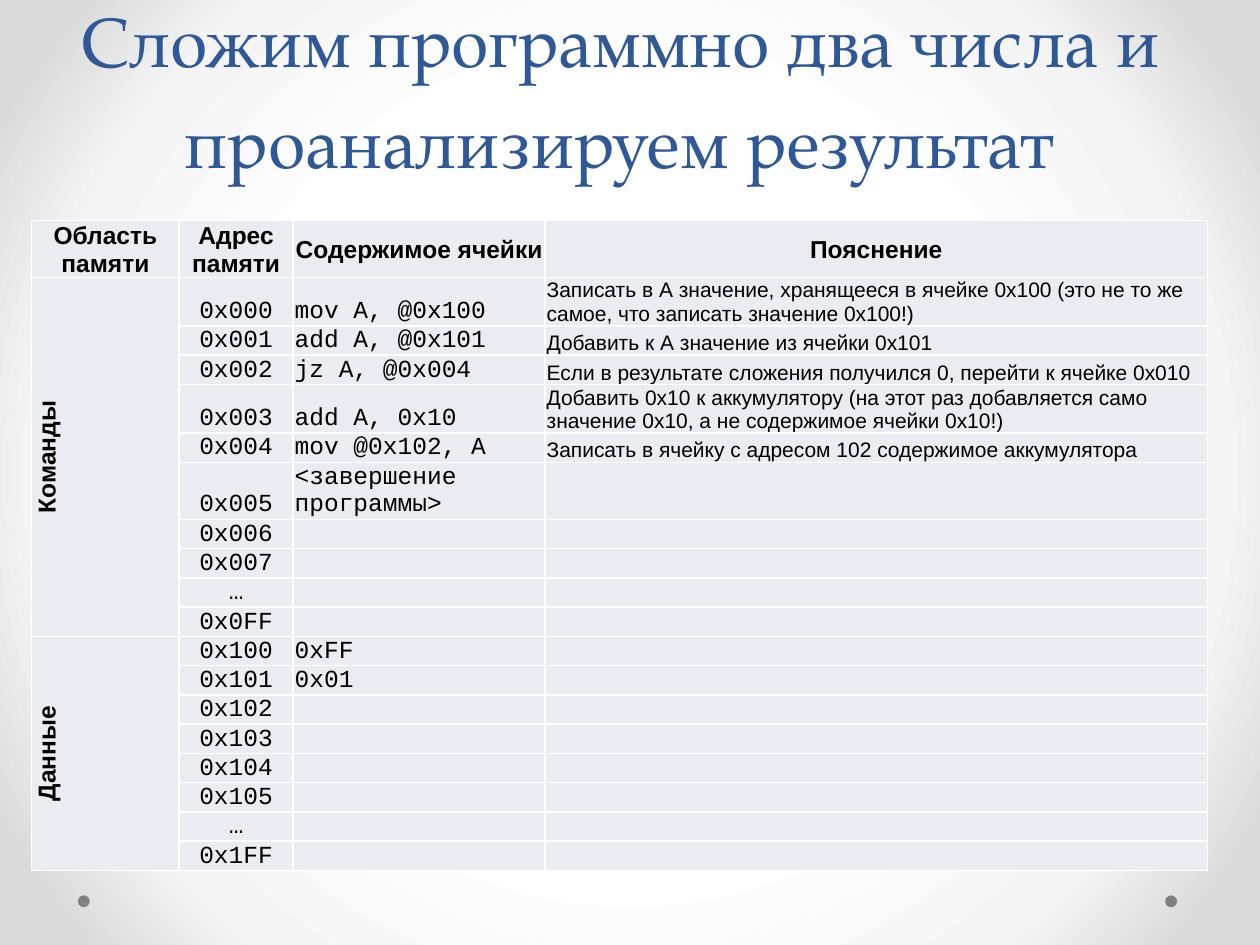
from dataclasses import dataclass

from lxml import etree
from pptx import Presentation
from pptx.dml.color import RGBColor
from pptx.enum.shapes import MSO_SHAPE
from pptx.enum.text import MSO_ANCHOR, MSO_AUTO_SIZE, PP_ALIGN
from pptx.oxml import parse_xml
from pptx.oxml.ns import nsdecls, qn
from pptx.util import Cm, Pt

CENTER, LEFT = PP_ALIGN.CENTER, PP_ALIGN.LEFT
MIDDLE, BOTTOM = MSO_ANCHOR.MIDDLE, MSO_ANCHOR.BOTTOM
OVAL = MSO_SHAPE.OVAL
NO_AUTOFIT = MSO_AUTO_SIZE.NONE


@dataclass(frozen=True)
class Theme:
    title_font: str = "TeX Gyre Pagella"
    text_font: str = "Arial"
    code_font: str = "Courier New"
    title_size: int = 40
    title_spacing: int = 58
    table_size: int = 14
    note_size: int = 12
    title_color: str = "2F5897"
    text_color: str = "000000"
    cell_color: str = "EAECF2"
    border_color: str = "FFFFFF"
    dot_color: str = "808080"
    background: tuple = ((50, "FFFFFF"), (76, "F4F4F4"), (92, "DADADA"))


THEME = Theme()

TITLE = "Сложим программно два числа и проанализируем результат"
HEADERS = ["Область памяти", "Адрес памяти", "Содержимое ячейки", "Пояснение"]
# Each memory area holds rows of address, content and explanation
MEMORY = {
    "Команды": [
        ("0x000", "mov A, @0x100", "Записать в А значение, хранящееся в ячейке 0x100 "
                                   "(это не то же самое, что записать значение 0x100!)"),
        ("0x001", "add A, @0x101", "Добавить к А значение из ячейки 0x101"),
        ("0x002", "jz A, @0x004",
         "Если в результате сложения получился 0, перейти к ячейке 0x010"),
        ("0x003", "add A, 0x10", "Добавить 0x10 к аккумулятору (на этот раз добавляется само "
                                 "значение 0x10, а не содержимое ячейки 0x10!)"),
        ("0x004", "mov @0x102, A", "Записать в ячейку с адресом 102 содержимое аккумулятора"),
        ("0x005", "<завершение программы>", ""),
        *((address, "", "") for address in ("0x006", "0x007", "…", "0x0FF")),
    ],
    "Данные": [
        ("0x100", "0xFF", ""),
        ("0x101", "0x01", ""),
        *((address, "", "") for address in ("0x102", "0x103", "0x104", "0x105", "…", "0x1FF")),
    ],
}
COLUMN_SHARES = [2.97, 2.3, 5.08, 13.35]
ROW_HEIGHT = 0.58
TALL_ROWS = {0: 1.14, 1: 0.97, 4: 0.97, 6: 1.14}


def color(value):
    return RGBColor.from_string(value)


def style_font(font, name, size, value, bold=False):
    font.name, font.size, font.bold = name, Pt(size), bold
    font.color.rgb = color(value)


def set_background(slide):
    """Radial gradient spreading from the middle of the slide."""
    stops = "".join(
        f'<a:gs pos="{position * 1000}"><a:srgbClr val="{value}"/></a:gs>'
        for position, value in THEME.background)
    slide.background.fill.solid()
    properties = slide.background.fill._xPr
    properties.replace(properties.find(qn("a:solidFill")), parse_xml(
        f'<a:gradFill {nsdecls("a")} rotWithShape="1"><a:gsLst>{stops}</a:gsLst>'
        '<a:path path="circle"><a:fillToRect l="50000" t="50000" r="50000" b="50000"/>'
        '</a:path></a:gradFill>'))


def add_dots(slide, left, top, width, size):
    """One dot at each end of the given strip."""
    for x in (left, left + width - size):
        dot = slide.shapes.add_shape(OVAL, x, top, size, size)
        dot.shadow.inherit = False
        dot.fill.solid()
        dot.fill.fore_color.rgb = color(THEME.dot_color)
        dot.line.fill.background()


def place_title(slide, left, top, width, height):
    title = slide.shapes.title
    title.left, title.top, title.width, title.height = left, top, width, height
    frame = title.text_frame
    frame.text = TITLE
    frame.word_wrap = True
    frame.auto_size = NO_AUTOFIT
    frame.vertical_anchor = BOTTOM
    paragraph = frame.paragraphs[0]
    paragraph.alignment = CENTER
    paragraph.line_spacing = Pt(THEME.title_spacing)
    style_font(paragraph.font, THEME.title_font, THEME.title_size, THEME.title_color)


def add_borders(cell):
    properties = cell._tc.get_or_add_tcPr()
    for index, side in enumerate(("lnL", "lnR", "lnT", "lnB")):
        properties.insert(index, parse_xml(
            f'<a:{side} {nsdecls("a")} w="{Pt(1)}"><a:solidFill>'
            f'<a:srgbClr val="{THEME.border_color}"/></a:solidFill></a:{side}>'))


def fill_cell(cell, text, font_name=THEME.text_font, size=THEME.table_size,
              bold=False, alignment=LEFT, anchor=BOTTOM):
    cell.margin_left = cell.margin_right = cell.margin_top = Cm(0.03)
    cell.margin_bottom = 0
    cell.vertical_anchor = anchor
    cell.fill.solid()
    cell.fill.fore_color.rgb = color(THEME.cell_color)
    add_borders(cell)
    if text:
        cell.text_frame.text = text
    paragraph = cell.text_frame.paragraphs[0]
    paragraph.alignment = alignment
    style_font(paragraph.font, font_name, size, THEME.text_color, bold)
    if not text:
        # An empty cell takes its line height from the end mark
        etree.SubElement(paragraph._p, qn("a:endParaRPr"), sz=str(size * 100))


def add_memory_table(slide, left, top, width):
    row_count = 1 + sum(len(rows) for rows in MEMORY.values())
    heights = [Cm(TALL_ROWS.get(index, ROW_HEIGHT)) for index in range(row_count)]
    table = slide.shapes.add_table(
        row_count, len(HEADERS), left, top, width, sum(heights)).table
    # Header emphasis comes from the cells themselves
    table.first_row = table.horz_banding = False
    for column, share in zip(table.columns, COLUMN_SHARES):
        column.width = int(width * share / sum(COLUMN_SHARES))
    for row, height in zip(table.rows, heights):
        row.height = height

    heading = {"bold": True, "alignment": CENTER, "anchor": MIDDLE}
    for index, text in enumerate(HEADERS):
        fill_cell(table.cell(0, index), text, **heading)

    first = 1
    for area, rows in MEMORY.items():
        last = first + len(rows) - 1
        for index, (address, content, note) in enumerate(rows, first):
            fill_cell(table.cell(index, 0), area if index == first else "", **heading)
            fill_cell(table.cell(index, 1), address, THEME.code_font, alignment=CENTER)
            fill_cell(table.cell(index, 2), content, THEME.code_font)
            fill_cell(table.cell(index, 3), note, size=THEME.note_size)
        # The area name runs upwards beside its rows
        area_cell = table.cell(first, 0)
        area_cell.merge(table.cell(last, 0))
        area_cell._tc.get_or_add_tcPr().set("vert", "vert270")
        first = last + 1


def main():
    presentation = Presentation()
    presentation.slide_width, presentation.slide_height = Cm(25.4), Cm(19.05)
    slide = presentation.slides.add_slide(presentation.slide_layouts[5])
    set_background(slide)
    add_dots(slide, Cm(1.57), Cm(18.05), Cm(22.16), Cm(0.24))
    place_title(slide, Cm(1.07), Cm(0.84), Cm(22.86), Cm(2.97))
    add_memory_table(slide, Cm(0.64), Cm(4.45), Cm(23.7))
    presentation.save("out.pptx")


if __name__ == "__main__":
    main()
